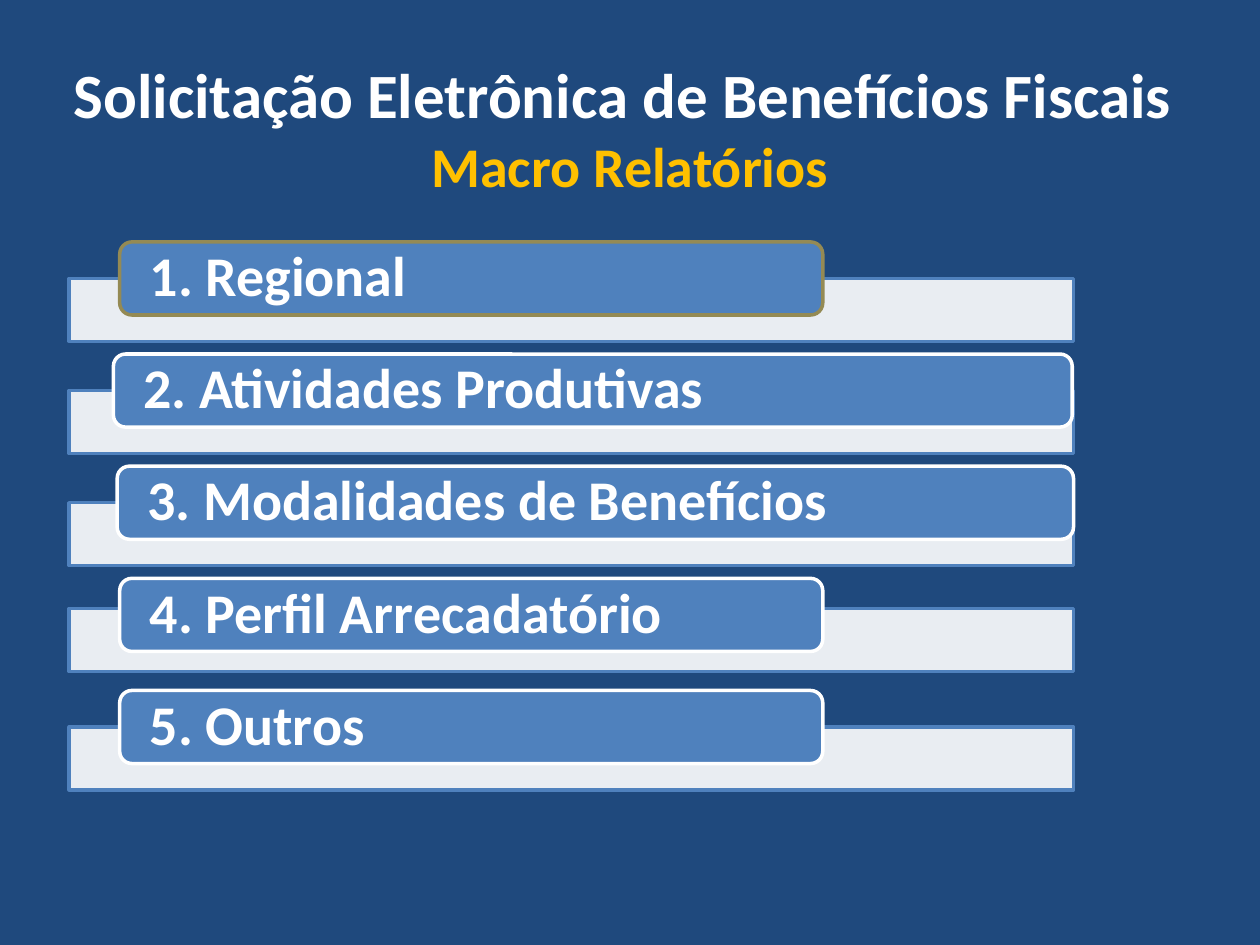
from dataclasses import dataclass

from lxml import etree
from pptx import Presentation
from pptx.dml.color import RGBColor
from pptx.enum.shapes import MSO_SHAPE
from pptx.enum.text import MSO_ANCHOR, MSO_AUTO_SIZE, PP_ALIGN
from pptx.oxml.ns import qn
from pptx.util import Inches, Pt

RECTANGLE = MSO_SHAPE.RECTANGLE
ROUNDED = MSO_SHAPE.ROUNDED_RECTANGLE
LEFT, CENTER = PP_ALIGN.LEFT, PP_ALIGN.CENTER
TOP, MIDDLE = MSO_ANCHOR.TOP, MSO_ANCHOR.MIDDLE
NO_AUTOFIT = MSO_AUTO_SIZE.NONE
TITLE_ONLY = 5


@dataclass(frozen=True)
class Theme:
    font: str = "Calibri"
    background: RGBColor = RGBColor(0x1F, 0x49, 0x7D)
    blue: RGBColor = RGBColor(0x4F, 0x81, 0xBD)
    white: RGBColor = RGBColor(0xFF, 0xFF, 0xFF)
    gold: RGBColor = RGBColor(0xFF, 0xC0, 0x00)
    olive: RGBColor = RGBColor(0x94, 0x8A, 0x54)
    title_size: Pt = Pt(36)
    text_size: Pt = Pt(32)
    line_width: Pt = Pt(2)
    bar_opacity: int = 90


THEME = Theme()

# Label, tab left, tab width, tab outline, drop from tab top to bar top
REPORTS = [
    ("1. Regional", 0.95, 5.58, THEME.olive, 0.29),
    ("2. Atividades Produtivas", 0.9, 7.61, THEME.white, 0.29),
    ("3. Modalidades de Benefícios", 0.93, 7.59, THEME.white, 0.29),
    ("4. Perfil Arrecadatório", 0.95, 5.58, THEME.white, 0.24),
    ("5. Outros", 0.95, 5.58, THEME.white, 0.29),
]
ROW_STEP = 0.89
TAB_HEIGHT = 0.58
BAR_HEIGHT = 0.5


def format_paragraph(paragraph, size, color, alignment):
    paragraph.alignment = alignment
    for run in paragraph.runs:
        run.font.name = THEME.font
        run.font.size = size
        run.font.bold = True
        run.font.color.rgb = color


def add_box(slide, kind, left, top, width, height, fill, outline):
    shape = slide.shapes.add_shape(
        kind, Inches(left), Inches(top), Inches(width), Inches(height))
    shape.shadow.inherit = False
    shape.fill.solid()
    shape.fill.fore_color.rgb = fill
    shape.line.color.rgb = outline
    shape.line.width = THEME.line_width
    return shape


def set_opacity(shape, percent):
    color = shape.fill._xPr.find(qn("a:solidFill"))[0]
    etree.SubElement(color, qn("a:alpha")).set("val", str(percent * 1000))


def add_title(slide, left, top, width, height):
    title = slide.shapes.title
    title.left, title.top = Inches(left), Inches(top)
    title.width, title.height = Inches(width), Inches(height)
    frame = title.text_frame
    frame.text = "Solicitação Eletrônica de Benefícios Fiscais \nMacro Relatórios"
    frame.word_wrap = True
    frame.auto_size = NO_AUTOFIT
    frame.vertical_anchor = TOP
    heading, subheading = frame.paragraphs
    format_paragraph(heading, THEME.title_size, THEME.white, CENTER)
    format_paragraph(subheading, THEME.text_size, THEME.gold, CENTER)


def add_report_list(slide, left, top, width):
    for row, (label, tab_left, tab_width, outline, drop) in enumerate(REPORTS):
        tab_top = top + row * ROW_STEP

        # Pale bar behind the tab
        bar = add_box(slide, RECTANGLE, left, tab_top + drop, width, BAR_HEIGHT,
                      THEME.white, THEME.blue)
        set_opacity(bar, THEME.bar_opacity)

        # Rounded tab with the report name
        tab = add_box(slide, ROUNDED, tab_left, tab_top, tab_width, TAB_HEIGHT,
                      THEME.blue, outline)
        frame = tab.text_frame
        frame.text = label
        frame.word_wrap = True
        frame.vertical_anchor = MIDDLE
        frame.margin_left = frame.margin_right = Inches(0.21)
        frame.margin_top = frame.margin_bottom = 0
        paragraph = frame.paragraphs[0]
        paragraph.line_spacing = 0.9
        format_paragraph(paragraph, THEME.text_size, THEME.white, LEFT)


def main():
    presentation = Presentation()
    presentation.slide_width = Inches(10)
    presentation.slide_height = Inches(7.5)
    slide = presentation.slides.add_slide(presentation.slide_layouts[TITLE_ONLY])
    slide.background.fill.solid()
    slide.background.fill.fore_color.rgb = THEME.background
    add_title(slide, 0.47, 0.39, 9.06, 1.85)
    add_report_list(slide, 0.55, 1.92, 7.97)
    presentation.save("out.pptx")


if __name__ == "__main__":
    main()
